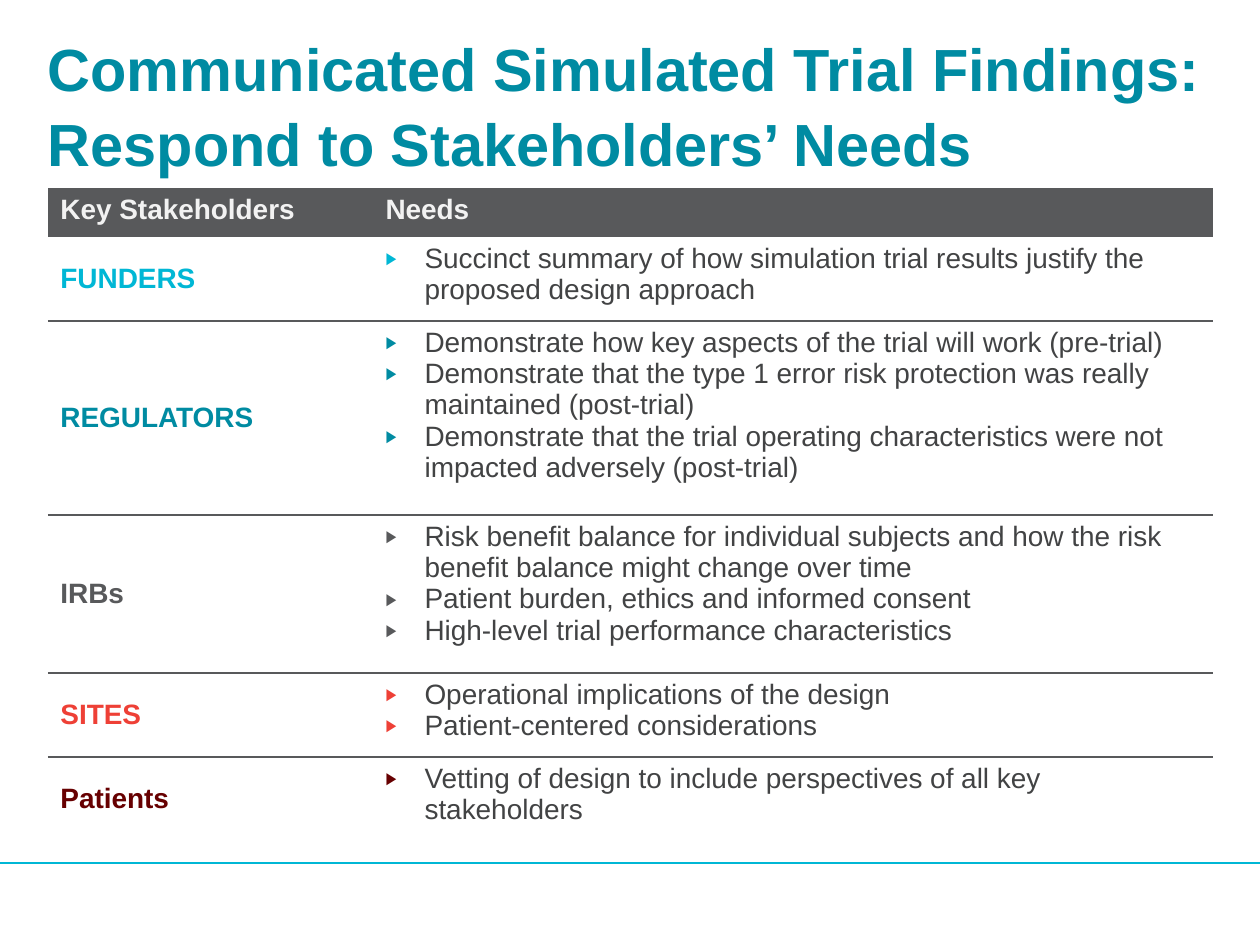
from lxml import etree
from pptx import Presentation
from pptx.dml.color import RGBColor
from pptx.enum.shapes import MSO_CONNECTOR, MSO_SHAPE
from pptx.enum.text import MSO_ANCHOR as Anchor, MSO_AUTO_SIZE as AutoSize, PP_ALIGN as Align
from pptx.oxml.ns import qn
from pptx.util import Inches, Pt

TEAL, CYAN, GRAY, RED, MAROON = "008BA2", "00B7D5", "58595B", "EE4036", "670001"
TEXT, WHITE, PALE = "424344", "FFFFFF", "F2F2F2"

COLUMN_WIDTHS = [2.58, 6.67]
HEADER_HEIGHT = 0.39
HEADINGS = ["Key Stakeholders", "Needs"]
# Name, colour, row height, needs
STAKEHOLDERS = [
    ("FUNDERS", CYAN, 0.67, [
        "Succinct summary of how simulation trial results justify the proposed design approach"]),
    ("REGULATORS", TEAL, 1.54, [
        "Demonstrate how key aspects of the trial will work (pre-trial)",
        "Demonstrate that the type 1 error risk protection was really maintained (post-trial)",
        "Demonstrate that the trial operating characteristics were not impacted adversely (post-trial)"]),
    ("IRBs", GRAY, 1.25, [
        "Risk benefit balance for individual subjects and how the risk benefit balance might change over time",
        "Patient burden, ethics and informed consent",
        "High-level trial performance characteristics"]),
    ("SITES", RED, 0.67, [
        "Operational implications of the design",
        "Patient-centered considerations"]),
    ("Patients", MAROON, 0.67, [
        "Vetting of design to include perspectives of all key stakeholders"]),
]


def rgb(color):
    return RGBColor.from_string(color)


def add_bullet(paragraph, color):
    properties = paragraph._p.get_or_add_pPr()
    properties.set("marL", str(Inches(0.31)))
    properties.set("indent", str(-Inches(0.31)))
    bullet_color = etree.SubElement(properties, qn("a:buClr"))
    etree.SubElement(bullet_color, qn("a:srgbClr"), val=color)
    etree.SubElement(properties, qn("a:buSzPct"), val="60000")
    etree.SubElement(properties, qn("a:buFont"), typeface="Arial")
    etree.SubElement(properties, qn("a:buChar"), char="▶")


def write_text(frame, lines, size=16, color=TEXT, bold=False, bullet=None, spacing=None):
    """Write one paragraph for each line."""
    for index, line in enumerate(lines):
        paragraph = frame.add_paragraph() if index else frame.paragraphs[0]
        paragraph.alignment = Align.LEFT
        if spacing:
            paragraph.line_spacing = spacing
        if bullet:
            add_bullet(paragraph, bullet)
        run = paragraph.add_run()
        run.text = line
        run.font.name = "Arial"
        run.font.size = Pt(size)
        run.font.bold = bold
        run.font.color.rgb = rgb(color)


def format_cell(cell, fill, rule_sides=""):
    """Fill the cell and rule only the given sides (T, B)."""
    properties = cell._tc.get_or_add_tcPr()
    for side in "LRTB":
        border = etree.SubElement(properties, qn(f"a:ln{side}"))
        if side in rule_sides:
            border.set("w", str(Pt(1.5)))
            solid = etree.SubElement(border, qn("a:solidFill"))
            etree.SubElement(solid, qn("a:srgbClr"), val=GRAY)
        else:
            etree.SubElement(border, qn("a:noFill"))
    cell.fill.solid()
    cell.fill.fore_color.rgb = rgb(fill)


def place_title(slide, left, top, width, height):
    title = slide.shapes.title
    title.left, title.top, title.width, title.height = map(Inches, (left, top, width, height))
    frame = title.text_frame
    frame.margin_left = frame.margin_right = frame.margin_top = frame.margin_bottom = 0
    frame.word_wrap = True
    frame.auto_size = AutoSize.NONE
    frame.vertical_anchor = Anchor.MIDDLE
    write_text(frame, ["Communicated Simulated Trial Findings: Respond to Stakeholders’ Needs"],
               size=34, color=TEAL, bold=True, spacing=1.05)


def add_footer(slide, left, top, width, height):
    band = slide.shapes.add_shape(MSO_SHAPE.RECTANGLE, *map(Inches, (left, top, width, height)))
    band.shadow.inherit = False
    band.fill.solid()
    band.fill.fore_color.rgb = rgb(WHITE)
    band.line.fill.background()

    rule_top = Inches(top + 0.02)
    rule = slide.shapes.add_connector(
        MSO_CONNECTOR.STRAIGHT, Inches(left), rule_top, Inches(left + width), rule_top)
    rule.line.color.rgb = rgb(CYAN)
    rule.line.width = Pt(0.75)
    etree.SubElement(rule._element.spPr, qn("a:effectLst"))


def add_stakeholder_table(slide, left, top, width):
    heights = [HEADER_HEIGHT] + [height for _, _, height, _ in STAKEHOLDERS]
    table = slide.shapes.add_table(
        len(heights), len(COLUMN_WIDTHS), *map(Inches, (left, top, width, sum(heights)))).table
    table.horz_banding = False
    for column, column_width in zip(table.columns, COLUMN_WIDTHS):
        column.width = Inches(column_width)
    for row, height in zip(table.rows, heights):
        row.height = Inches(height)

    # Header row
    for cell, heading in zip(table.rows[0].cells, HEADINGS):
        write_text(cell.text_frame, [heading], color=PALE, bold=True)
        format_cell(cell, GRAY)

    # One row for each stakeholder, with rules between them
    for index, (name, color, _, needs) in enumerate(STAKEHOLDERS, start=1):
        name_cell, needs_cell = table.rows[index].cells
        name_cell.vertical_anchor = Anchor.MIDDLE
        write_text(name_cell.text_frame, [name], color=color, bold=True)
        write_text(needs_cell.text_frame, needs, bullet=color)
        sides = ("T" if index > 1 else "") + ("B" if index < len(STAKEHOLDERS) else "")
        for cell in (name_cell, needs_cell):
            format_cell(cell, WHITE, sides)


def main():
    presentation = Presentation()
    presentation.slide_width, presentation.slide_height = Inches(10), Inches(7.5)
    slide = presentation.slides.add_slide(presentation.slide_layouts[5])
    add_footer(slide, 0, 6.83, 10, 0.67)
    place_title(slide, 0.38, 0.4, 9.25, 0.84)
    add_stakeholder_table(slide, 0.38, 1.49, sum(COLUMN_WIDTHS))
    presentation.save("out.pptx")


if __name__ == "__main__":
    main()
